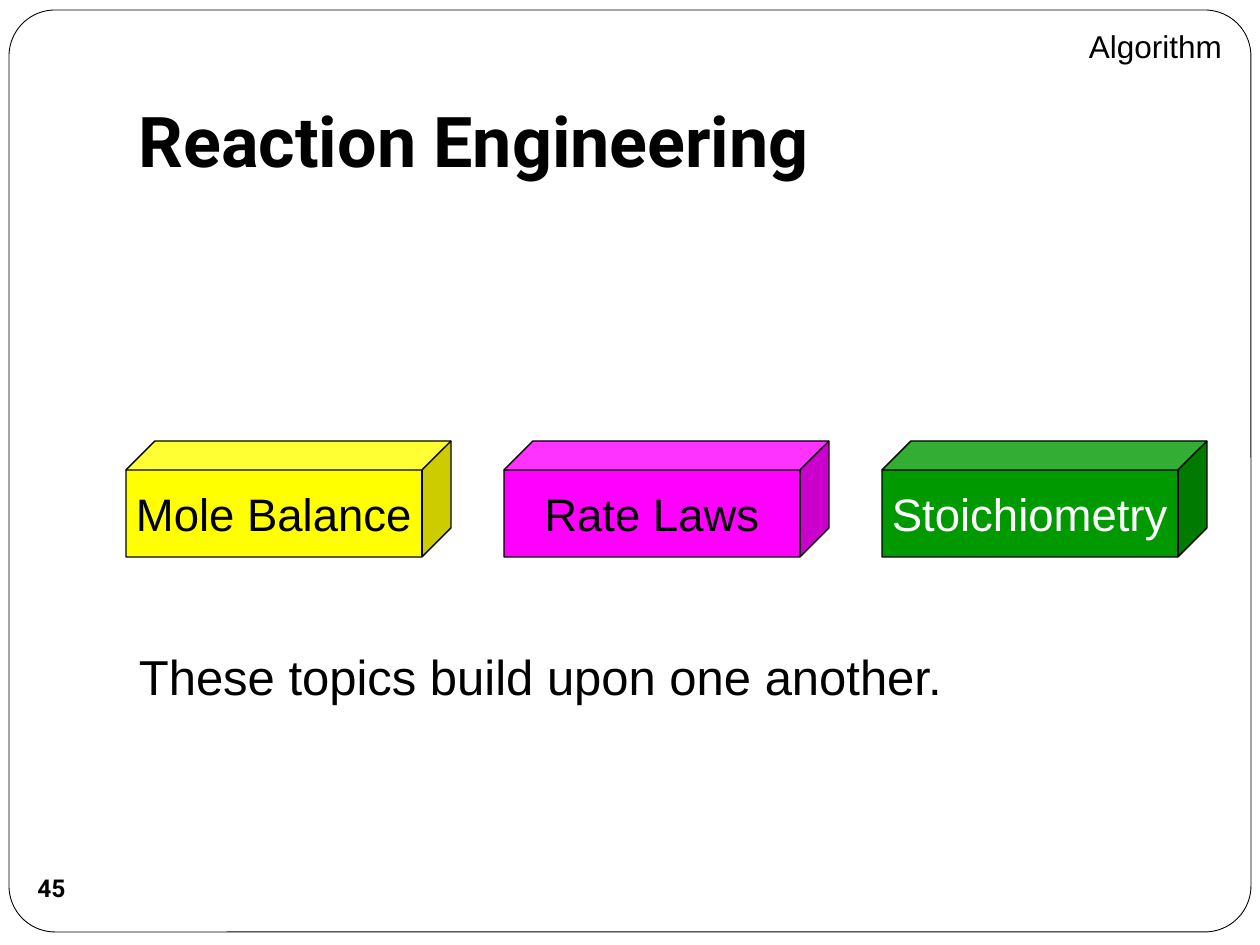
import pptx
import pptx.dml.color
import pptx.enum.shapes
import pptx.enum.text
import pptx.util

PX = 914400 / 126
SHAPES = pptx.enum.shapes.MSO_SHAPE
ALIGN = pptx.enum.text.PP_ALIGN
ANCHOR = pptx.enum.text.MSO_ANCHOR
TOPICS = [
    ("Mole Balance", "FFFF00", "000000"),
    ("Rate Laws", "FF00FF", "000000"),
    ("Stoichiometry", "009900", "FFFFFF"),
]


def scaled(*lengths):
    """Turn lengths in px into EMU."""
    return [pptx.util.Emu(round(length * PX)) for length in lengths]


def color(value):
    """Return the colour for a hex string."""
    return pptx.dml.color.RGBColor.from_string(value)


def write(shape, text, size=28, font="Arial", ink="000000", bold=False,
          align=ALIGN.LEFT, anchor=ANCHOR.TOP, wrap=True, margins=(13, 6, 13, 6)):
    """Put one formatted paragraph into a shape."""
    frame = shape.text_frame
    frame.auto_size = pptx.enum.text.MSO_AUTO_SIZE.NONE
    frame.word_wrap = wrap
    frame.vertical_anchor = anchor
    (frame.margin_left, frame.margin_top,
     frame.margin_right, frame.margin_bottom) = scaled(*margins)
    paragraph = frame.paragraphs[0]
    paragraph.alignment = align
    run = paragraph.add_run()
    run.text = text
    run.font.size = pptx.util.Pt(size)
    run.font.name = font
    run.font.bold = bold
    run.font.color.rgb = color(ink)


def add_shape(slide, kind, box, fill=None, line_width=None):
    """Add a preset shape without shadow, with optional fill and black line."""
    shape = slide.shapes.add_shape(kind, *scaled(*box))
    shape.shadow.inherit = False
    if fill:
        shape.fill.solid()
        shape.fill.fore_color.rgb = color(fill)
    else:
        shape.fill.background()
    if line_width:
        shape.line.color.rgb = color("000000")
        shape.line.width = pptx.util.Pt(line_width)
    else:
        shape.line.fill.background()
    return shape


def add_label(slide, box, text, **text_format):
    """Add a text box with one formatted paragraph."""
    write(slide.shapes.add_textbox(*scaled(*box)), text, **text_format)


def add_frame(slide, box):
    """Add the rounded page frame behind the title."""
    frame = add_shape(slide, SHAPES.ROUNDED_RECTANGLE, box, "FFFFFF", 0.5)
    frame.adjustments[0] = 0.05
    slide.shapes.title.element.addprevious(frame.element)


def add_title(slide, box, text):
    """Place and fill the title placeholder."""
    title = slide.shapes.title
    title.left, title.top, title.width, title.height = scaled(*box)
    write(title, text, size=40, font="Roboto", bold=True,
          anchor=ANCHOR.BOTTOM, margins=(13, 6, 13, 13))


def add_topics(slide, box, topics, gap):
    """Spread the topic blocks evenly across a box."""
    left, top, width, height = box
    block_width = (width - gap * (len(topics) - 1)) // len(topics)
    for index, (text, fill, ink) in enumerate(topics):
        block_left = left + index * (block_width + gap)
        block = add_shape(slide, SHAPES.CUBE,
                          (block_left, top, block_width, height), fill, 0.75)
        write(block, text, size=26, ink=ink, align=ALIGN.CENTER,
              anchor=ANCHOR.MIDDLE, wrap=False)


def add_page_number(slide, box, text):
    """Add the page number in an invisible circle."""
    circle = add_shape(slide, SHAPES.OVAL, box)
    write(circle, text, size=14, font="Roboto", bold=True, align=ALIGN.CENTER,
          anchor=ANCHOR.MIDDLE, wrap=False, margins=(0, 0, 0, 0))


def main():
    """Build and save the slide."""
    presentation = pptx.Presentation()
    presentation.slide_width, presentation.slide_height = scaled(1260, 945)
    slide = presentation.slides.add_slide(presentation.slide_layouts[5])
    slide.background.fill.solid()
    slide.background.fill.fore_color.rgb = color("FFFFFF")
    add_frame(slide, (9, 10, 1242, 922))
    add_title(slide, (126, 38, 1071, 157), "Reaction Engineering")
    add_topics(slide, (126, 441, 1081, 116), TOPICS, gap=53)
    add_label(slide, (126, 640, 1008, 72), "These topics build upon one another.")
    add_page_number(slide, (20, 856, 63, 63), "45")
    add_label(slide, (887, 21, 348, 50), "Algorithm", size=18, align=ALIGN.RIGHT)
    presentation.save("out.pptx")


if __name__ == "__main__":
    main()
